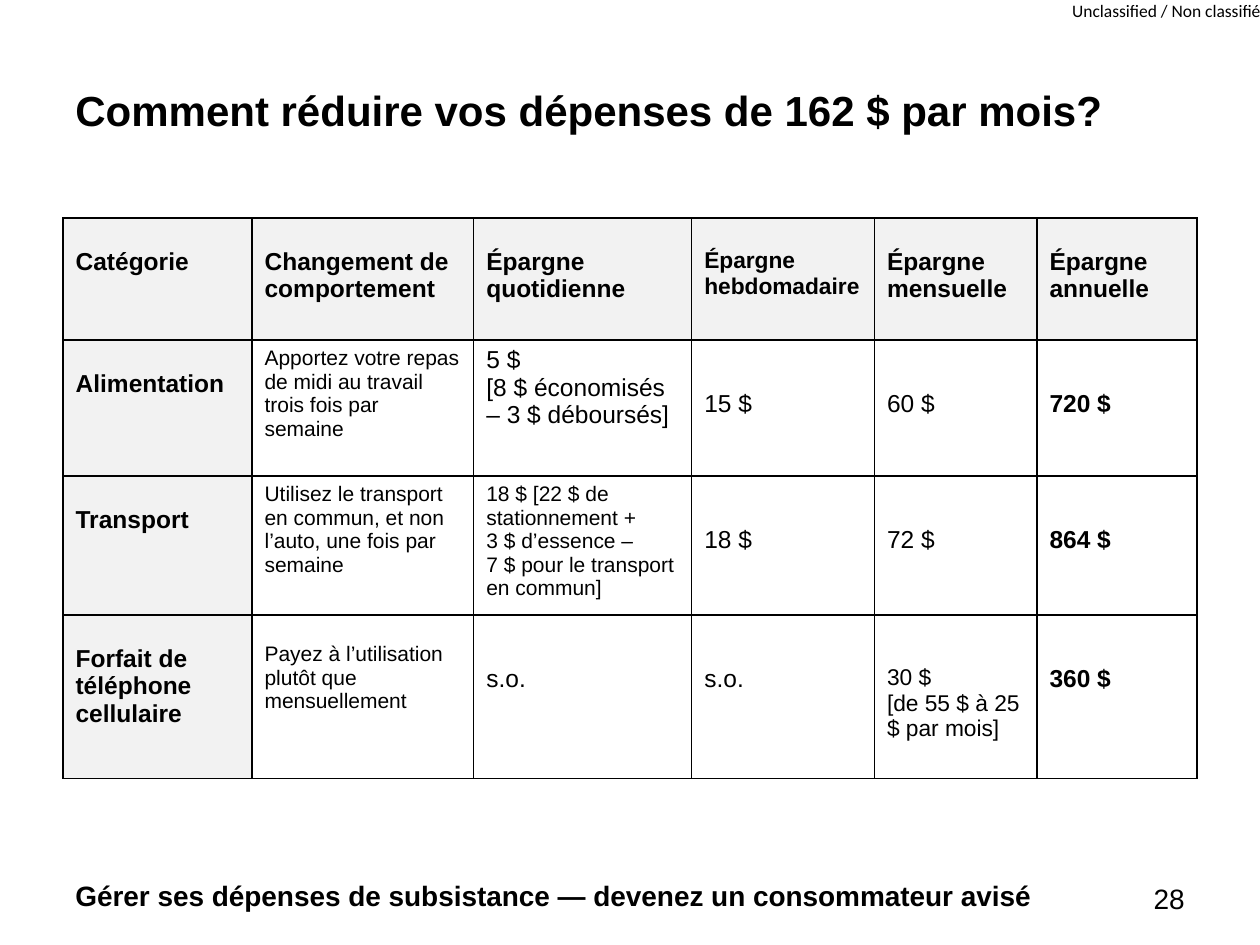
from lxml.etree import SubElement
from pptx import Presentation
from pptx.dml.color import RGBColor
from pptx.enum.text import MSO_ANCHOR as Anchor, PP_ALIGN as Align
from pptx.oxml.ns import qn
from pptx.util import Inches, Pt

BLACK = RGBColor(0, 0, 0)
WHITE = RGBColor(255, 255, 255)
GREY = RGBColor(0xF2, 0xF2, 0xF2)

LABEL = "Unclassified / Non classifié"
TITLE = "Comment réduire vos dépenses de 162 $ par mois?"
FOOTER = "Gérer ses dépenses de subsistance — devenez un consommateur avisé"
NUMBER = "28"

ROWS = [
    ["Catégorie", "Changement de comportement", "Épargne quotidienne",
     "Épargne hebdomadaire", "Épargne mensuelle", "Épargne annuelle"],
    ["Alimentation",
     "Apportez votre repas de midi au travail trois fois par semaine",
     "5 $\n[8 $ économisés – 3 $ déboursés]", "15 $", "60 $", "720 $"],
    ["Transport",
     "Utilisez le transport en commun, et non l’auto, une fois par semaine",
     "18 $ [22 $ de stationnement +\n3 $ d’essence –\n7 $ pour le transport en commun]",
     "18 $", "72 $", "864 $"],
    ["Forfait de téléphone cellulaire",
     "Payez à l’utilisation plutôt que mensuellement",
     "s.o.", "s.o.", "30 $\n[de 55 $ à 25 $ par mois]", "360 $"],
]
COLUMN_WIDTHS = [1.5, 1.76, 1.73, 1.45, 1.29, 1.27]
ROW_HEIGHTS = [0.97, 1.08, 1.1, 1.3]
SIZES = {(0, 3): 13, (1, 1): 12, (2, 1): 12, (3, 1): 12, (2, 2): 12, (3, 4): 13}
TOP_MARGINS = {(1, 1): 0.05, (2, 1): 0.05, (1, 2): 0.05, (2, 2): 0.05, (3, 1): 0.22}
HEADING_MARGIN, VALUE_MARGIN = 0.24, 0.4


def write(frame, text, size, bold=False, font="Arial", align=Align.LEFT):
    for index, line in enumerate(text.split("\n")):
        para = frame.add_paragraph() if index else frame.paragraphs[0]
        para.alignment = align
        span = para.add_run()
        span.text = line
        span.font.name = font
        span.font.size = Pt(size)
        span.font.bold = bold
        span.font.color.rgb = BLACK


def add_text(page, text, place, size, wrap=True, margin=None, anchor=Anchor.MIDDLE, **style):
    box = page.shapes.add_textbox(*map(Inches, place))
    frame = box.text_frame
    frame.word_wrap = wrap
    frame.vertical_anchor = anchor
    if margin is not None:
        frame.margin_left = frame.margin_right = Inches(margin)
        frame.margin_top = frame.margin_bottom = Inches(margin)
    write(frame, text, size, **style)


def add_borders(cell):
    properties = cell._tc.get_or_add_tcPr()
    for side in ("lnL", "lnR", "lnT", "lnB"):
        line = SubElement(properties, qn(f"a:{side}"), w=str(Pt(1)))
        fill = SubElement(line, qn("a:solidFill"))
        SubElement(fill, qn("a:srgbClr"), val=str(BLACK))


def add_savings_table(page):
    table = page.shapes.add_table(
        len(ROWS), len(COLUMN_WIDTHS), Inches(0.5), Inches(1.73),
        Inches(sum(COLUMN_WIDTHS)), Inches(sum(ROW_HEIGHTS))).table
    for column, width in zip(table.columns, COLUMN_WIDTHS):
        column.width = Inches(width)
    for row, height in zip(table.rows, ROW_HEIGHTS):
        row.height = Inches(height)
    for r, texts in enumerate(ROWS):
        for c, text in enumerate(texts):
            heading = r == 0 or c == 0
            cell = table.cell(r, c)
            default = HEADING_MARGIN if heading else VALUE_MARGIN
            cell.margin_top = Inches(TOP_MARGINS.get((r, c), default))
            add_borders(cell)
            cell.fill.solid()
            cell.fill.fore_color.rgb = GREY if heading else WHITE
            last = c == len(texts) - 1
            write(cell.text_frame, text, SIZES.get((r, c), 14), bold=heading or last)


def main():
    deck = Presentation()
    deck.slide_width, deck.slide_height = Inches(10), Inches(7.5)
    page = deck.slides.add_slide(deck.slide_layouts[6])
    add_text(page, LABEL, (8.51, 0, 1.52, 0.17), 10, wrap=False, margin=0,
             anchor=Anchor.TOP, font="Calibri")
    add_text(page, TITLE, (0.5, 0.62, 8.46, 0.5), 24, bold=True)
    add_text(page, NUMBER, (8.96, 6.95, 0.54, 0.33), 16, anchor=Anchor.TOP, align=Align.RIGHT)
    add_savings_table(page)
    add_text(page, FOOTER, (0.5, 6.91, 8.33, 0.39), 16, bold=True)
    deck.save("out.pptx")


if __name__ == "__main__":
    main()
